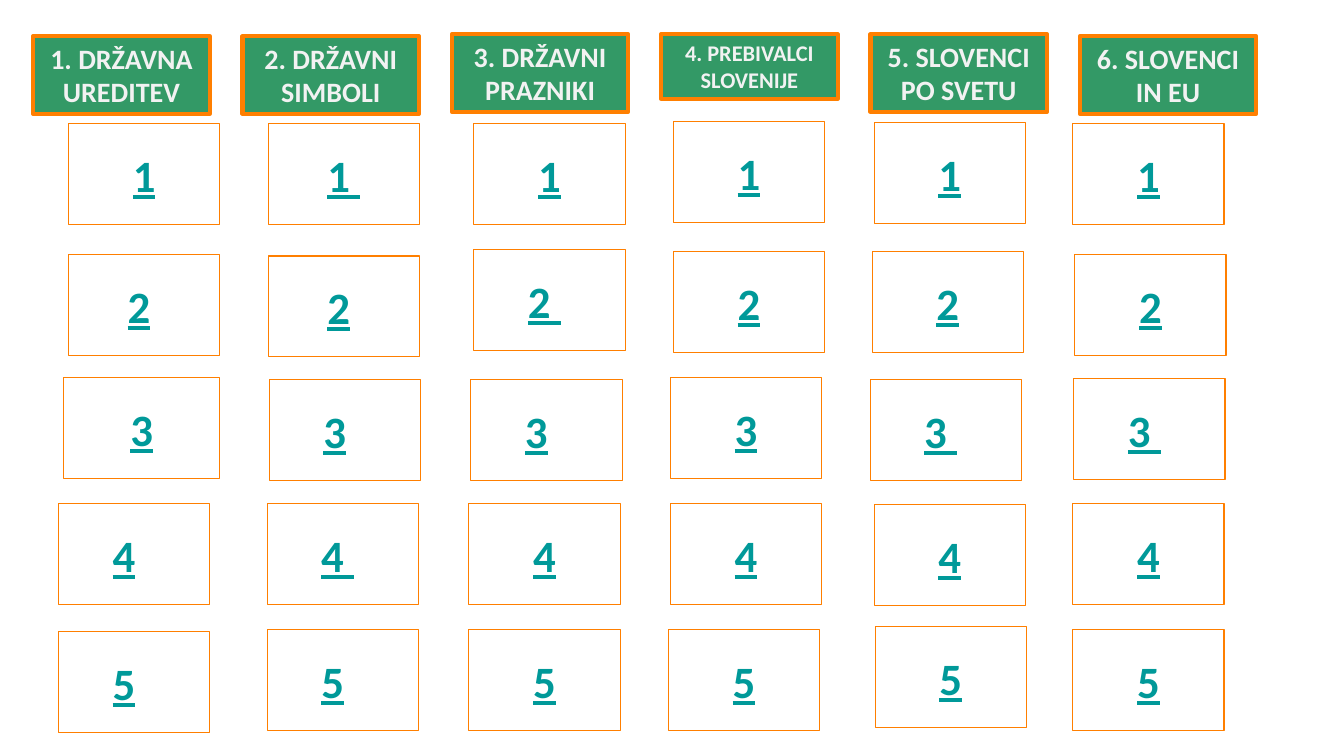
from pptx import Presentation
from pptx.dml.color import RGBColor
from pptx.enum.shapes import MSO_SHAPE
from pptx.enum.text import MSO_ANCHOR, MSO_AUTO_SIZE, PP_ALIGN
from pptx.util import Inches, Pt

# title, text size, top, height
HEADS = [
    ("1. DRŽAVNA UREDITEV", 20, 0.36, 0.77),
    ("2. DRŽAVNI SIMBOLI", 20, 0.36, 0.77),
    ("3. DRŽAVNI PRAZNIKI", 20, 0.34, 0.77),
    ("4. PREBIVALCI SLOVENIJE", 16, 0.34, 0.64),
    ("5. SLOVENCI PO SVETU", 20, 0.34, 0.77),
    ("6. SLOVENCI IN EU", 20, 0.36, 0.77),
]
# label, nudge right and down from the grid (1/100 inch), extra right inset (spaces)
BUTTONS = [
    [("1", 2, 0, 0), ("1 ", 0, 0, 0), ("1", 4, 0, 0),
     ("1", 2, -2, 0), ("1", 1, -1, 0), ("1", -2, 0, 0)],
    [("2", 2, 4, 1), ("2", 0, 5, 1), ("2 ", 4, -1, 1),
     ("2", 2, 1, 0), ("2", -1, 1, 0), ("2", 0, 4, 0)],
    [("3", -3, 0, 0), ("3", 1, 2, 2), ("3", 1, 2, 2),
     ("3", -1, 0, 0), ("3 ", -3, 2, 1), ("3 ", -1, 1, 1)],
    [("4", -8, -1, 2), ("4 ", -1, -1, 1), ("4", -1, -1, 0),
     ("4", -1, -1, 0), ("4", 1, 0, 0), ("4", -2, -1, 0)],
    [("5", -8, 0, 2), ("5", -1, -2, 2), ("5", -1, -2, 0),
     ("5", -3, -2, 0), ("5", 2, -5, 0), ("5", -2, -2, 0)],
]
WIDE = {(2, 0): 1.55}  # row, column: width of the one wider button

FONT = "Calibri"
GREEN, ORANGE, TEAL = "339966", "FF7F00", "009999"
WHITE, PALE = "FFFFFF", "F2F2F2"
HEAD_X, HEAD_STEP, HEAD_W = 0.33, 2.076, 1.75
GRID_X, COL_STEP, BUTTON_W = 0.66, 2, 1.5
GRID_Y, ROW_STEP, BUTTON_H = 1.23, 1.26, 1
SPACE = 7.2  # points taken by one space at 32 pt


def color(code):
    return RGBColor.from_string(code)


def box(slide, kind, place, fill, weight):
    shape = slide.shapes.add_shape(kind, *[Inches(v) for v in place])
    shape.shadow.inherit = False
    shape.fill.solid()
    shape.fill.fore_color.rgb = color(fill)
    shape.line.color.rgb = color(ORANGE)
    shape.line.width = Pt(weight)
    return shape


def write(shape, text, size, ink, underline=False, wrap=True,
          anchor=MSO_ANCHOR.TOP, fit=MSO_AUTO_SIZE.NONE, pad=0):
    frame = shape.text_frame
    frame.word_wrap = wrap
    frame.auto_size = fit
    frame.vertical_anchor = anchor
    frame.margin_right = Inches(0.1) + Pt(pad)
    para = frame.paragraphs[0]
    para.alignment = PP_ALIGN.CENTER
    run = para.add_run()
    run.text = text
    font = run.font
    font.name, font.size, font.bold = FONT, Pt(size), True
    font.underline = underline
    font.color.rgb = color(ink)


def main():
    deck = Presentation()
    deck.slide_width, deck.slide_height = Inches(13.33), Inches(7.5)
    slide = deck.slides.add_slide(deck.slide_layouts[6])

    for col, (title, size, top, height) in enumerate(HEADS):
        place = HEAD_X + col * HEAD_STEP, top, HEAD_W, height
        head = box(slide, MSO_SHAPE.RECTANGLE, place, GREEN, 3)
        write(head, title, size, PALE, fit=MSO_AUTO_SIZE.SHAPE_TO_FIT_TEXT)

    for row, line in enumerate(BUTTONS):
        for col, (label, right, down, spaces) in enumerate(line):
            place = (GRID_X + col * COL_STEP + right / 100,
                     GRID_Y + row * ROW_STEP + down / 100,
                     WIDE.get((row, col), BUTTON_W), BUTTON_H)
            button = box(slide, MSO_SHAPE.ACTION_BUTTON_CUSTOM, place, WHITE, 0.75)
            write(button, label, 32, TEAL, underline=True, wrap=False,
                  anchor=MSO_ANCHOR.MIDDLE, pad=spaces * SPACE)

    deck.save("out.pptx")


if __name__ == "__main__":
    main()
